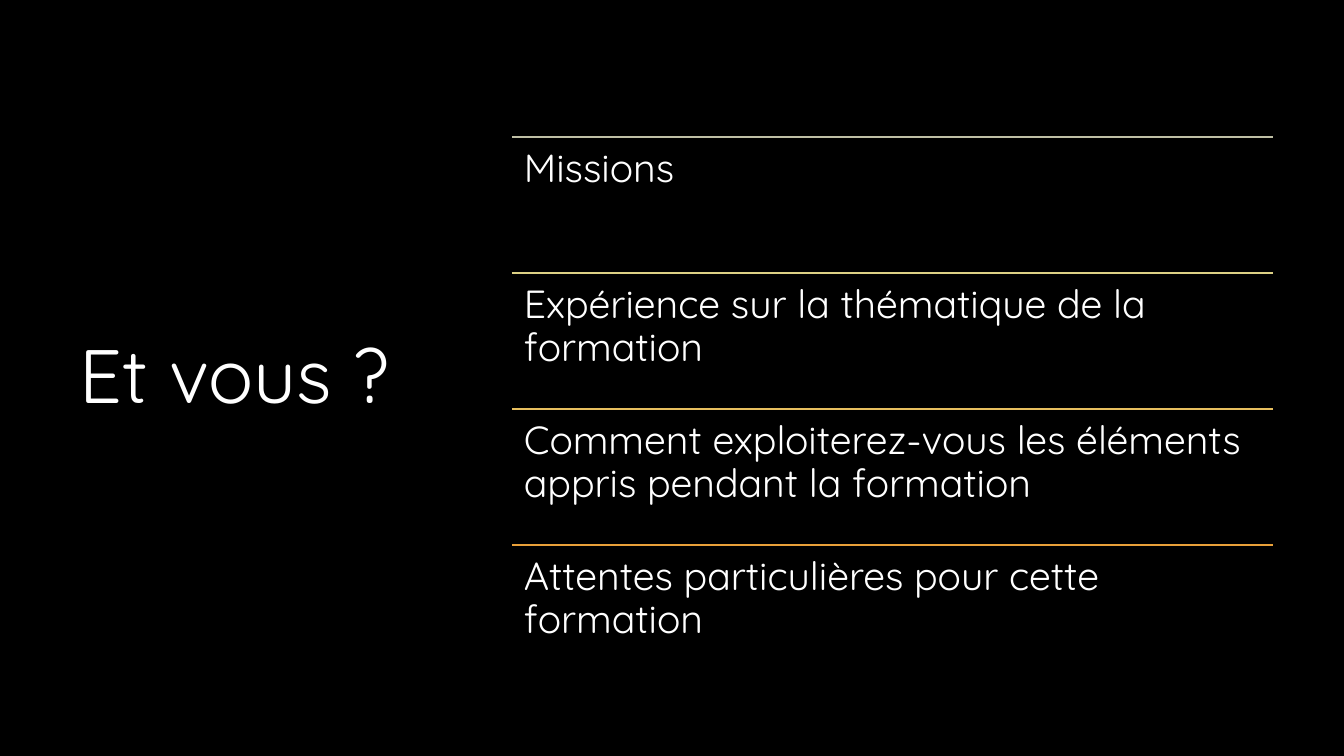
from dataclasses import dataclass

import pptx
import pptx.dml.color
import pptx.enum.shapes
import pptx.enum.text
import pptx.oxml
import pptx.oxml.ns
import pptx.util

WIDE, HIGH = 1344, 756
SCALE = 12192000 / WIDE


@dataclass(frozen=True)
class Theme:
    face: str = "Quicksand"
    back: str = "000000"
    ink: str = "FFFFFF"
    title: int = 54
    body: int = 28
    rule: float = 1.5
    lead: float = 0.9


def emu(px):
    return pptx.util.Emu(round(px * SCALE))


def rgb(code):
    return pptx.dml.color.RGBColor.from_string(code)


def apply(item, form):
    for name, value in form.items():
        setattr(item, name, value)


class Deck:
    def __init__(self, theme):
        self.theme = theme
        self.show = pptx.Presentation()
        apply(self.show, {"slide_width": emu(WIDE), "slide_height": emu(HIGH)})
        self.slide = self.show.slides.add_slide(self.show.slide_layouts[6])
        fill = self.slide.background.fill
        fill.solid()
        fill.fore_color.rgb = rgb(theme.back)

    def text(self, words, box, size, pad, anchor):
        """Add a wrapped text box; pad is its (side, top) inset in px."""
        frame = self.slide.shapes.add_textbox(*map(emu, box)).text_frame
        side, top = map(emu, pad)
        apply(frame, {
            "word_wrap": True,
            "vertical_anchor": anchor,
            "margin_left": side,
            "margin_right": side,
            "margin_top": top,
            "margin_bottom": top,
        })
        para = frame.paragraphs[0]
        para.line_spacing = self.theme.lead
        run = para.add_run()
        run.text = words
        apply(run.font, {"name": self.theme.face, "size": pptx.util.Pt(size)})
        run.font.color.rgb = rgb(self.theme.ink)

    def rule(self, left, top, width, color):
        """Add a level line without a shadow."""
        ends = map(emu, (left, top, left + width, top))
        kind = pptx.enum.shapes.MSO_CONNECTOR.STRAIGHT
        line = self.slide.shapes.add_connector(kind, *ends)
        line.line.width = pptx.util.Pt(self.theme.rule)
        line.line.color.rgb = rgb(color)
        props = line.element.find(pptx.oxml.ns.qn("p:spPr"))
        props.append(pptx.oxml.parse_xml(
            f"<a:effectLst {pptx.oxml.ns.nsdecls('a')}/>"))


ROWS = [
    ("Missions", "BFBFA5"),
    ("Expérience sur la thématique de la formation", "DCD084"),
    ("Comment exploiterez-vous les éléments appris pendant la formation",
     "E7BF5F"),
    ("Attentes particulières pour cette formation", "E9A039"),
]


def main():
    theme = Theme()
    deck = Deck(theme)
    anchor = pptx.enum.text.MSO_ANCHOR
    deck.text("Et vous ?", (70, 71, 377, 616), theme.title, (10, 5),
              anchor.MIDDLE)
    left, first, width, step = 512, 137, 761, 136
    for row, (words, color) in enumerate(ROWS):
        top = first + row * step
        deck.rule(left, top, width, color)
        deck.text(words, (left, top, width, step), theme.body, (12, 12),
                  anchor.TOP)
    deck.show.save("out.pptx")


if __name__ == "__main__":
    main()
